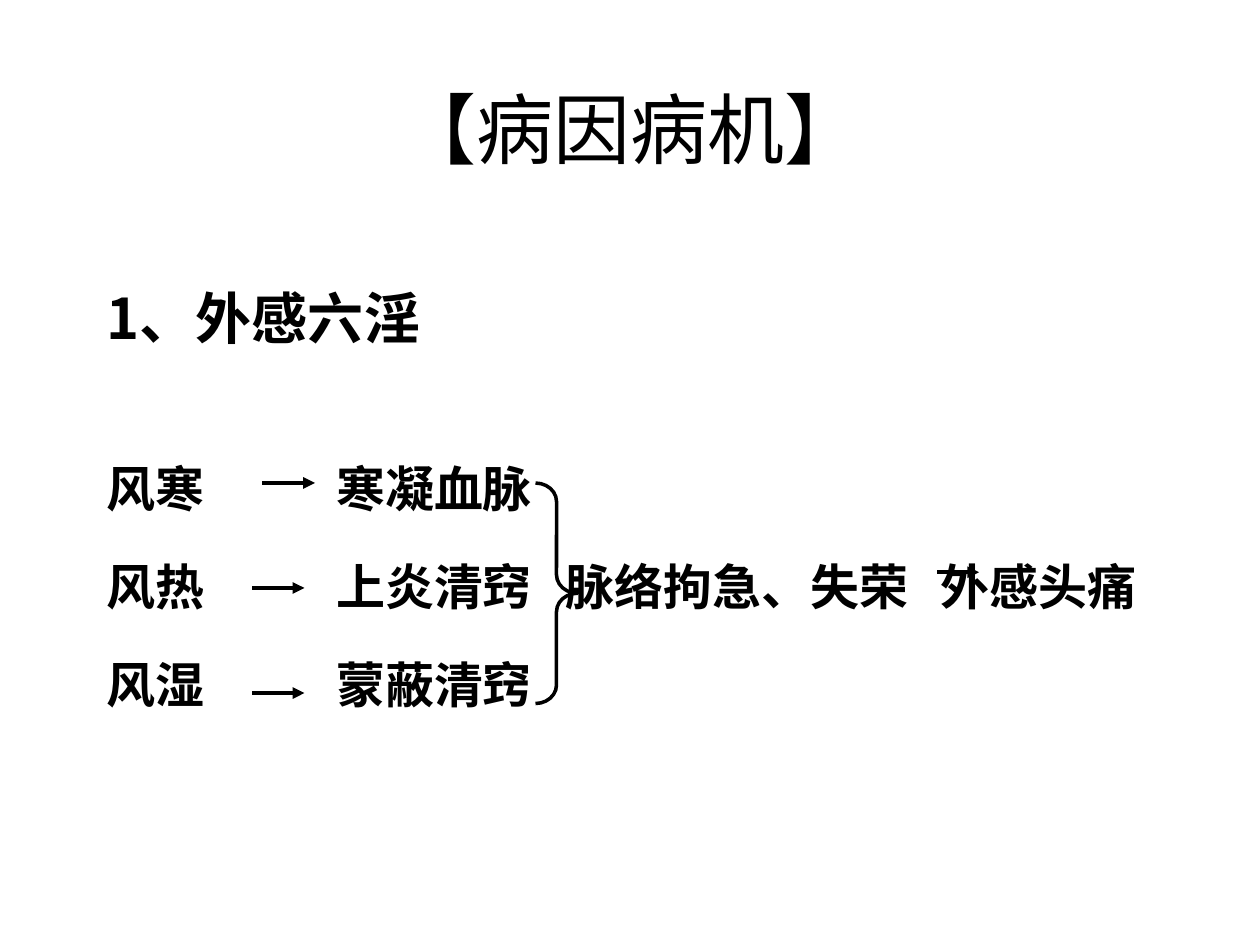
from lxml import etree
from pptx import Presentation
from pptx import util as u
from pptx.dml.color import RGBColor
from pptx.enum import shapes, text
from pptx.oxml.ns import qn


def color(value):
    return RGBColor.from_string(value)


class Sketch:
    """Draws black-on-white elements on a slide with a grid of twelve cells to the inch."""

    font = "Noto Sans CJK JP"
    ink = "000000"
    paper = "FFFFFF"

    def __init__(self, deck):
        self.slide = deck.slides.add_slide(deck.slide_layouts[5])
        fill = self.slide.background.fill
        fill.solid()
        fill.fore_color.rgb = color(self.paper)

    def cells(self, *counts):
        return [u.Inches(count / 12) for count in counts]

    def style(self, paragraph, size, bold, align):
        paragraph.alignment = align
        font = paragraph.font
        font.size, font.bold, font.name = u.Pt(size), bold, self.font
        font.color.rgb = color(self.ink)
        defaults = paragraph._p.pPr.find(qn("a:defRPr"))
        etree.SubElement(defaults, qn("a:ea"), typeface=self.font)

    def title(self, words, *area):
        box = self.slide.shapes.title
        box.left, box.top, box.width, box.height = self.cells(*area)
        frame = box.text_frame
        frame.text = words
        frame.vertical_anchor = text.MSO_ANCHOR.MIDDLE
        self.style(frame.paragraphs[0], 44, False, text.PP_ALIGN.CENTER)

    def body(self, heading, rows, tabs, *area):
        frame = self.slide.shapes.add_textbox(*self.cells(*area)).text_frame
        frame.word_wrap = True
        frame.text = "\n".join([heading] + ["\t".join(row) for row in rows])
        first, *others = frame.paragraphs
        self.style(first, 32, True, text.PP_ALIGN.JUSTIFY)
        first.line_spacing = u.Pt(41)
        for paragraph in others:
            self.style(paragraph, 28, True, text.PP_ALIGN.JUSTIFY)
            paragraph.line_spacing = u.Pt(56)
            self.tab_stops(paragraph, tabs)
        others[0].space_before = u.Pt(39)

    def tab_stops(self, paragraph, tabs):
        stops = etree.Element(qn("a:tabLst"))
        for tab in tabs:
            etree.SubElement(stops, qn("a:tab"), pos=str(u.Inches(tab)), algn="l")
        paragraph._p.pPr.find(qn("a:defRPr")).addprevious(stops)

    def outline(self, shape, width):
        shape.line.color.rgb = color(self.ink)
        shape.line.width = u.Pt(width)

    def arrow(self, left, top, length):
        ends = self.cells(left, top, left + length, top)
        line = self.slide.shapes.add_connector(shapes.MSO_CONNECTOR.STRAIGHT, *ends)
        self.outline(line, 2.25)
        properties = line._element.spPr
        etree.SubElement(properties.find(qn("a:ln")), qn("a:tailEnd"), type="triangle")
        etree.SubElement(properties, qn("a:effectLst"))

    def brace(self, *area):
        brace = self.slide.shapes.add_shape(shapes.MSO_SHAPE.RIGHT_BRACE, *self.cells(*area))
        brace.adjustments[0], brace.adjustments[1] = 0.44, 0.5
        brace.shadow.inherit = False
        brace.fill.background()
        self.outline(brace, 2)


def main():
    deck = Presentation()
    deck.slide_width, deck.slide_height = u.Inches(10), u.Inches(7.5)
    sketch = Sketch(deck)
    sketch.title("【病因病机】 ", 4.2, 7.2, 113.4, 10)
    causes = [
        ("风寒", "寒凝血脉"),
        ("风热", "上炎清窍", "脉络拘急、失荣", "外感头痛"),
        ("风湿", "蒙蔽清窍"),
    ]
    sketch.body("1、外感六淫", causes, (1.82, 3.64, 6.62), 9, 26, 107, 54)
    for row, left in enumerate((25, 24, 24)):
        sketch.arrow(left, 46 + 10 * row, 5)
    sketch.brace(51, 46, 4, 21)
    sketch.arrow(89.25, 54.5, 4)
    deck.save("out.pptx")


if __name__ == "__main__":
    main()
